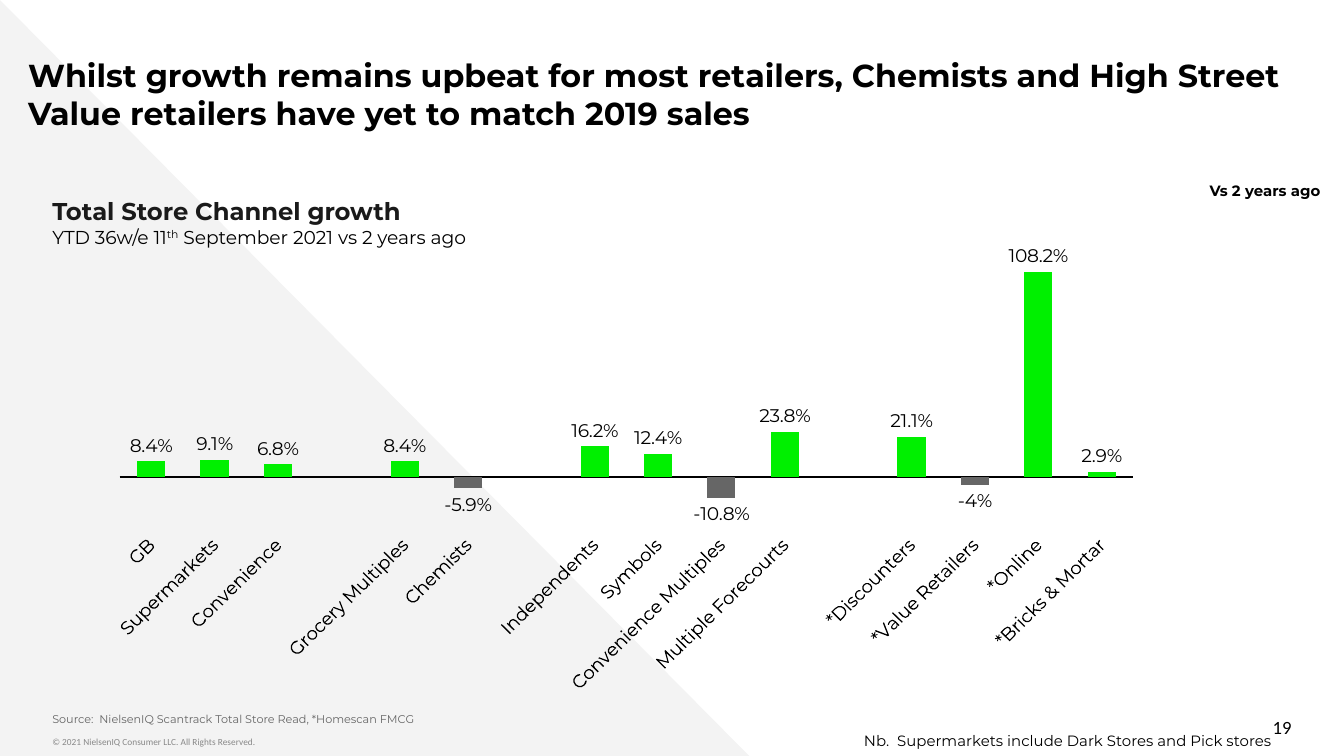
from lxml import etree
from pptx import Presentation
from pptx.chart.data import CategoryChartData
from pptx.dml.color import RGBColor
from pptx.enum.chart import XL_CHART_TYPE, XL_LABEL_POSITION, XL_TICK_LABEL_POSITION, XL_TICK_MARK
from pptx.enum.shapes import MSO_SHAPE
from pptx.enum.text import MSO_ANCHOR, MSO_AUTO_SIZE, PP_ALIGN
from pptx.oxml import parse_xml
from pptx.oxml.ns import nsdecls, qn
from pptx.util import Cm, Pt

COLORS = {
    "black": "000000", "heading": "1A1A1A", "source": "666666", "copyright": "888888",
    "panel": "F3F3F3", "growth": "00F000", "decline": "666666",
}
FONT, FOOTER_FONT = "Montserrat", "Calibri"

# Content
TITLE = ("Whilst growth remains upbeat for most retailers, Chemists and High Street "
         "Value retailers have yet to match 2019 sales")
CHANNELS = [
    ("GB", 0.084), ("Supermarkets", 0.091), ("Convenience", 0.068), ("", None),
    ("Grocery Multiples", 0.084), ("Chemists", -0.059), ("", None),
    ("Independents", 0.162), ("Symbols", 0.124), ("Convenience Multiples", -0.108),
    ("Multiple Forecourts", 0.238), ("", None),
    ("*Discounters", 0.211), ("*Value Retailers", -0.04), ("*Online", 1.082),
    ("*Bricks & Mortar", 0.029),
]
WHOLE_PERCENT_CHANNEL = "*Value Retailers"
PLOT_AREA = {"x": 0.009, "y": 0.063, "w": 0.961, "h": 0.585}

# Each run: text, size, colour, bold, font
HEADING_RUN = ("Total Store Channel growth", 13, "heading", True, FONT)
PERIOD_RUNS = [(text, 10, "black", False, FONT)
               for text in ("YTD 36w/e 11", "th", " September 2021 vs 2 years ago")]

# Each box: position, run, alignment, anchor, side and top insets, wrap
BOXES = [
    ((0.99, 13.79, 14.07, 0.51),
     ("© 2021 NielsenIQ Consumer LLC. All Rights Reserved.", 5, "copyright", False, FOOTER_FONT),
     PP_ALIGN.LEFT, MSO_ANCHOR.TOP, (0, 0.13), True),
    ((18.69, 13.36, 5.72, 0.76), ("19", 10, "black", False, FOOTER_FONT),
     PP_ALIGN.RIGHT, MSO_ANCHOR.MIDDLE, (0, 0.13), True),
    ((0.99, 13.46, 22.66, 0.51),
     ("Source:  NielsenIQ Scantrack Total Store Read, *Homescan FMCG", 6, "source", False, FONT),
     PP_ALIGN.LEFT, MSO_ANCHOR.BOTTOM, (0, 0.25), True),
    ((15.98, 13.69, 8.31, 0.61),
     ("Nb.  Supermarkets include Dark Stores and Pick stores", 8, "black", False, FONT),
     PP_ALIGN.RIGHT, MSO_ANCHOR.TOP, (0.25, 0.13), False),
    ((22.61, 3.3, 2.64, 0.61), ("Vs 2 years ago", 8, "black", True, FONT),
     PP_ALIGN.LEFT, MSO_ANCHOR.TOP, (0.25, 0.13), False),
]


def color(name):
    return RGBColor.from_string(COLORS[name])


def place(position):
    return [Cm(length) for length in position]


def add_run(paragraph, text, size, color_name, bold, font_name):
    run = paragraph.add_run()
    run.text = text
    run.font.size, run.font.bold, run.font.name = Pt(size), bold, font_name
    run.font.color.rgb = color(color_name)
    return run


def format_frame(frame, insets, anchor=MSO_ANCHOR.TOP, wrap=True):
    side, top = insets
    frame.margin_left = frame.margin_right = Cm(side)
    frame.margin_top = frame.margin_bottom = Cm(top)
    frame.vertical_anchor = anchor
    frame.word_wrap = wrap
    frame.auto_size = MSO_AUTO_SIZE.NONE if wrap else MSO_AUTO_SIZE.SHAPE_TO_FIT_TEXT


def add_box(slide, position, run, alignment, anchor, insets, wrap):
    frame = slide.shapes.add_textbox(*place(position)).text_frame
    format_frame(frame, insets, anchor, wrap)
    paragraph = frame.paragraphs[0]
    paragraph.alignment = alignment
    add_run(paragraph, *run)
    return paragraph


def add_growth_chart(slide):
    names = [name for name, growth in CHANNELS]
    data = CategoryChartData(number_format="0.0%")
    data.categories = names
    data.add_series("Series 1", [growth for name, growth in CHANNELS])
    chart = slide.shapes.add_chart(
        XL_CHART_TYPE.COLUMN_CLUSTERED, *place((2.08, 4.17, 19.94, 8.94)), data).chart
    chart.has_legend = chart.has_title = False
    chart.font.size, chart.font.name = Pt(10), FONT
    chart.font.color.rgb = color("black")

    # Axes
    category_axis, value_axis = chart.category_axis, chart.value_axis
    category_axis.tick_label_position = XL_TICK_LABEL_POSITION.LOW
    category_axis.major_tick_mark = XL_TICK_MARK.NONE
    category_axis.format.line.color.rgb = color("black")
    category_axis.format.line.width = Pt(0.75)
    category_axis.tick_labels.font.size = Pt(10)
    text_body = category_axis._element.find(qn("c:txPr")).find(qn("a:bodyPr"))
    text_body.set("rot", "-2700000")
    text_body.set("vert", "horz")
    value_axis.has_major_gridlines = False
    value_axis.minimum_scale, value_axis.maximum_scale = -0.23, 1.2
    value_axis.visible = False

    # Columns and labels
    plot = chart.plots[0]
    plot.gap_width, plot.vary_by_categories = 125, False
    series = plot.series[0]
    series.invert_if_negative = False
    series.format.fill.solid()
    series.format.fill.fore_color.rgb = color("growth")
    for index, (name, growth) in enumerate(CHANNELS):
        if growth is not None and growth < 0:
            fill = series.points[index].format.fill
            fill.solid()
            fill.fore_color.rgb = color("decline")
    labels = series.data_labels
    labels.show_value = True
    labels.number_format, labels.number_format_is_linked = "0.0%", False
    labels.position = XL_LABEL_POSITION.OUTSIDE_END
    whole_index = names.index(WHOLE_PERCENT_CHANNEL)
    series.points[whole_index].data_label.position = XL_LABEL_POSITION.OUTSIDE_END
    label_index = labels._element.find(qn("c:dLbl")).find(qn("c:idx"))
    label_index.addnext(parse_xml(
        f'<c:numFmt {nsdecls("c")} formatCode="0%" sourceLinked="0"/>'))

    # Fixed inner plot area
    plot_area = chart._chartSpace.chart.plotArea
    for old_layout in plot_area.findall(qn("c:layout")):
        plot_area.remove(old_layout)
    layout = etree.Element(qn("c:layout"))
    manual = etree.SubElement(layout, qn("c:manualLayout"))
    settings = {"layoutTarget": "inner", "xMode": "edge", "yMode": "edge", **PLOT_AREA}
    for tag, setting in settings.items():
        etree.SubElement(manual, qn(f"c:{tag}")).set("val", str(setting))
    plot_area.insert(0, layout)


def main():
    presentation = Presentation()
    presentation.slide_width, presentation.slide_height = Cm(25.4), Cm(14.29)
    slide = presentation.slides.add_slide(presentation.slide_layouts[5])

    # Background triangle, sent behind the title
    triangle = slide.shapes.add_shape(MSO_SHAPE.RIGHT_TRIANGLE, *place((0, 0, 14.2, 14.33)))
    triangle.shadow.inherit = False
    triangle.fill.solid()
    triangle.fill.fore_color.rgb = color("panel")
    triangle.line.fill.background()
    slide.shapes._spTree.insert(2, triangle._element)

    # Title
    title = slide.shapes.title
    title.left, title.top, title.width, title.height = place((0.53, 0.81, 24.66, 1.65))
    format_frame(title.text_frame, (0, 0.25))
    paragraph = title.text_frame.paragraphs[0]
    paragraph.alignment = PP_ALIGN.LEFT
    add_run(paragraph, TITLE, 17, "black", True, FONT)

    # Chart heading with its period
    paragraph = add_box(slide, (0.99, 3.58, 10.57, 1.24), HEADING_RUN,
                        PP_ALIGN.LEFT, MSO_ANCHOR.TOP, (0, 0.13), True)
    paragraph.space_after = Pt(12)
    paragraph.add_line_break()
    for period_run in PERIOD_RUNS:
        run = add_run(paragraph, *period_run)
        if run.text == "th":
            run.font._element.set("baseline", "30000")

    add_growth_chart(slide)

    # Footer and notes
    for box in BOXES:
        add_box(slide, *box)

    presentation.save("out.pptx")


if __name__ == "__main__":
    main()
